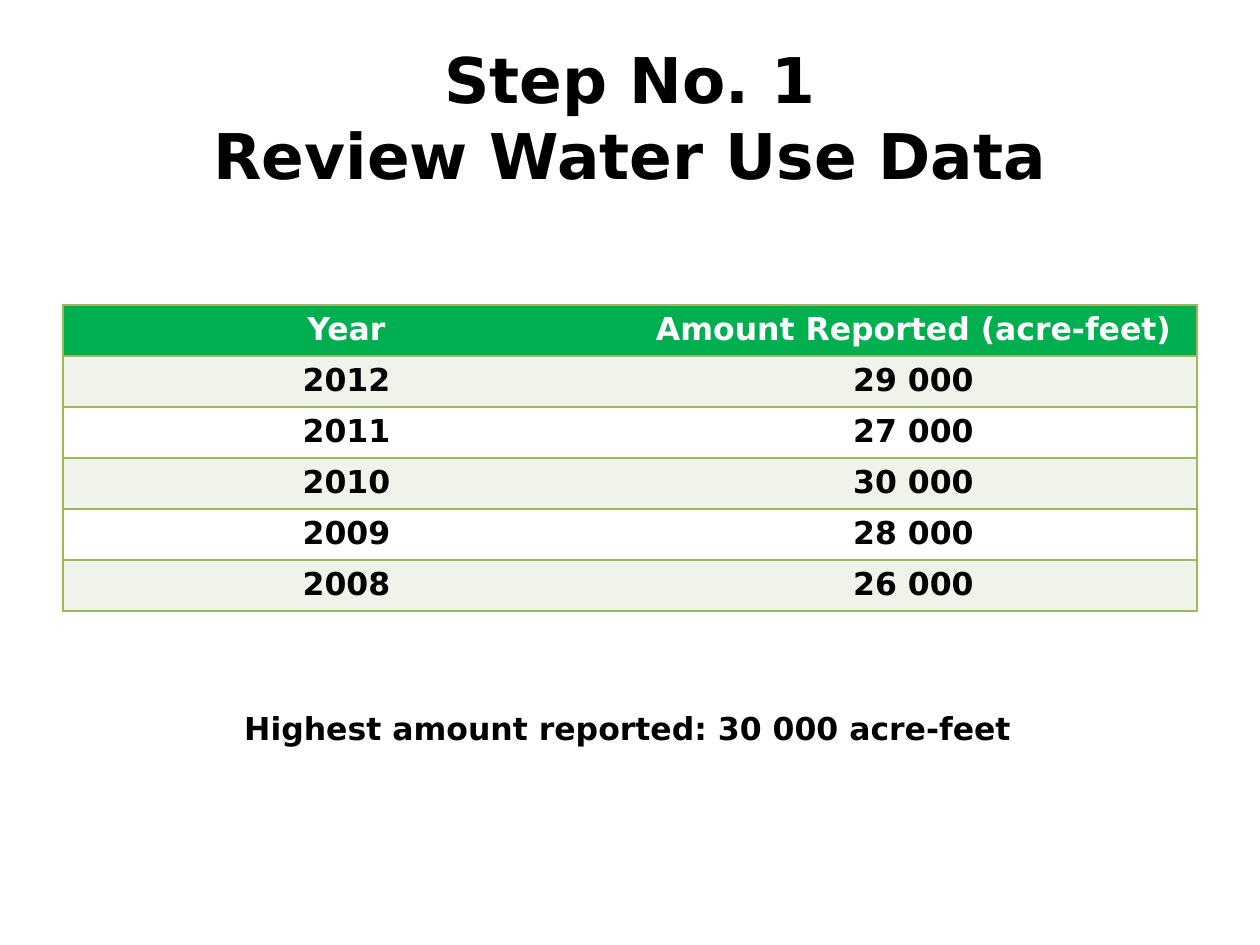
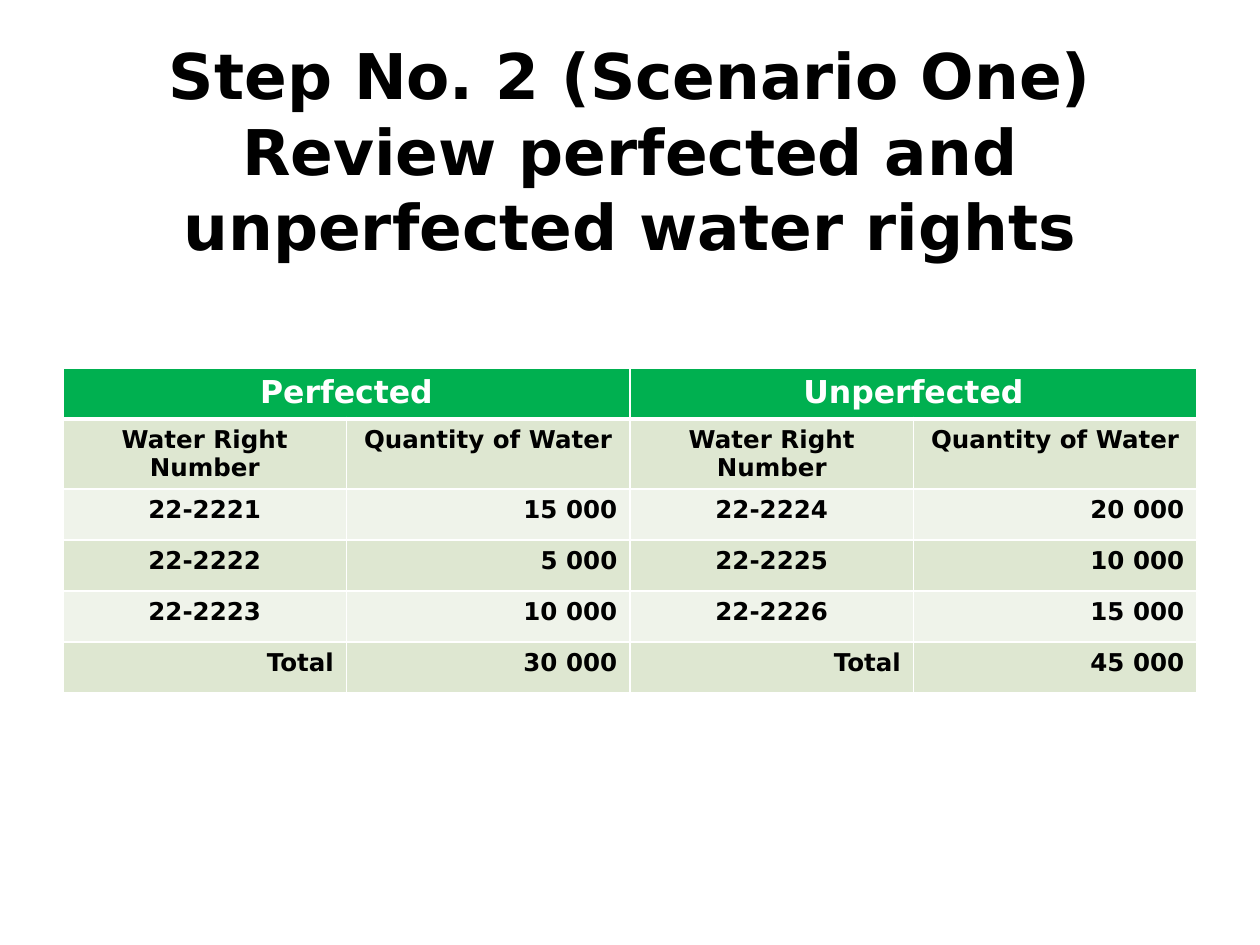
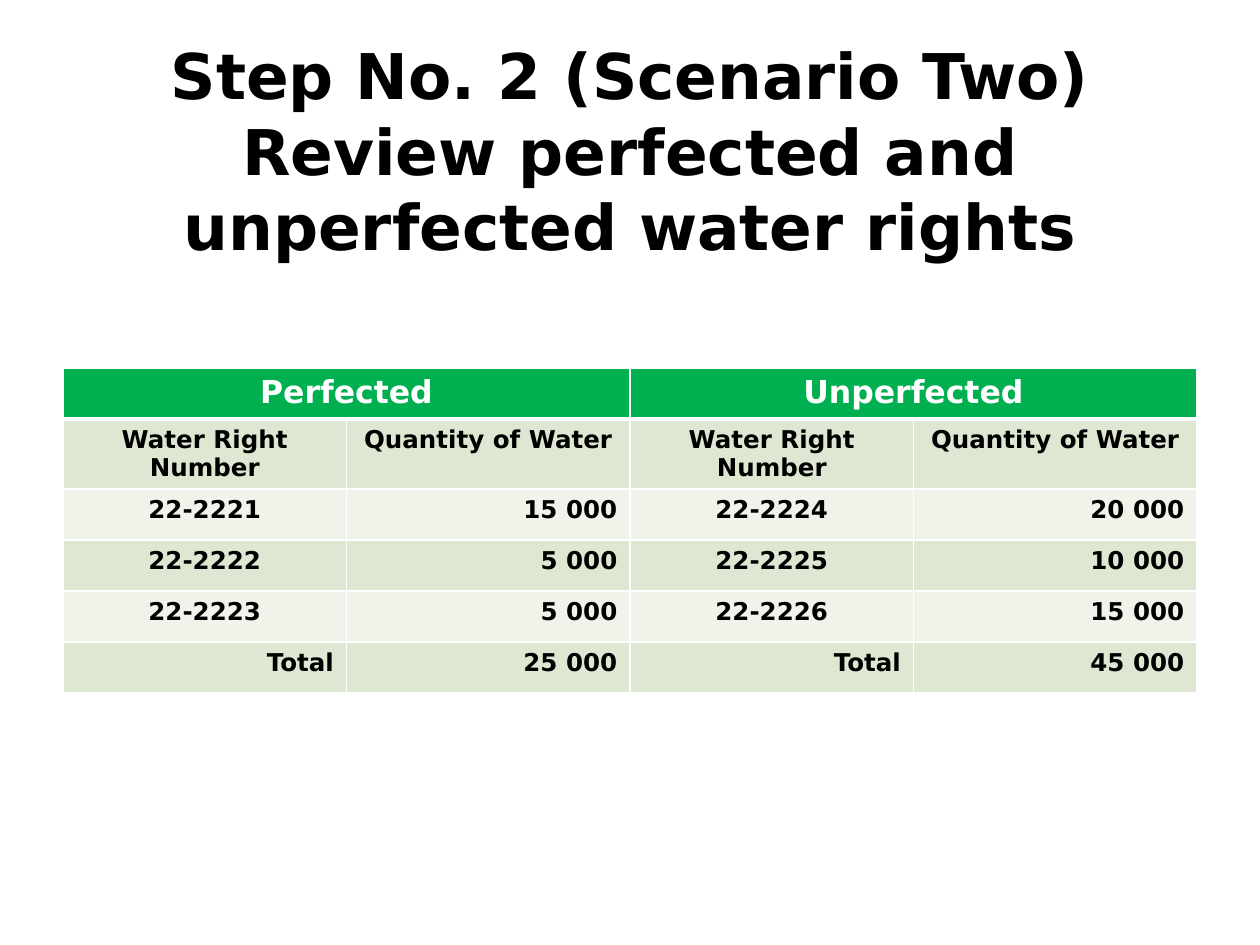
from dataclasses import dataclass
from typing import Optional

from lxml.etree import SubElement
from pptx import Presentation
from pptx.dml.color import RGBColor
from pptx.enum.text import MSO_ANCHOR, MSO_AUTO_SIZE, PP_ALIGN
from pptx.oxml.ns import qn
from pptx.util import Inches, Pt

# Shared look
FONT = "DejaVu Sans"
BLACK = RGBColor(0x00, 0x00, 0x00)
WHITE = RGBColor(0xFF, 0xFF, 0xFF)
GREEN = RGBColor(0x00, 0xB0, 0x50)
OLIVE = RGBColor(0x9B, 0xBB, 0x59)
BAND_DARK = RGBColor(0xDE, 0xE7, 0xD1)
BAND_LIGHT = RGBColor(0xEF, 0xF3, 0xEA)

# Shared grid
SLIDE_W, SLIDE_H = Inches(10), Inches(7.5)
MARGIN = int(SLIDE_W * 0.05)
CONTENT_W = SLIDE_W - 2 * MARGIN
TITLE_TOP = int(SLIDE_H * 0.04)
ROW_H = Inches(0.405)


@dataclass
class Cell:
    text: str
    fill: RGBColor
    align: PP_ALIGN = PP_ALIGN.CENTER
    size: int = 18
    color: RGBColor = BLACK
    span: int = 1


@dataclass
class Borders:
    color: RGBColor
    inner_vertical: bool
    header_rule: float = 1


@dataclass
class Scenario:
    name: str
    perfected: list[int]
    unperfected: list[int]


USE_BY_YEAR = {2012: 29000, 2011: 27000, 2010: 30000, 2009: 28000, 2008: 26000}
SCENARIOS = [
    Scenario("One", [15000, 5000, 10000], [20000, 10000, 15000]),
    Scenario("Two", [15000, 5000, 5000], [20000, 10000, 15000]),
]


def spaced(amount: int) -> str:
    return f"{amount:,}".replace(",", " ")


def style(p, size: float, color: RGBColor, align: Optional[PP_ALIGN] = None) -> None:
    p.alignment = align
    p.font.name, p.font.size, p.font.bold = FONT, Pt(size), True
    p.font.color.rgb = color


def add_titled_slide(prs, title: str, height: float):
    s = prs.slides.add_slide(prs.slide_layouts[5])
    sp = s.shapes.title
    sp.left, sp.top, sp.width, sp.height = MARGIN, TITLE_TOP, CONTENT_W, Inches(height)
    tf = sp.text_frame
    tf.text = title
    tf.auto_size = MSO_AUTO_SIZE.NONE
    tf.vertical_anchor = MSO_ANCHOR.MIDDLE
    style(tf.paragraphs[0], 36, BLACK, PP_ALIGN.CENTER)
    return s


def set_border(cell, side: str, color: RGBColor, width: float) -> None:
    """Draw one side of a cell; a width of 0 hides it."""
    ln = SubElement(cell._tc.get_or_add_tcPr(), qn(f"a:ln{side}"), w=str(Pt(width)))
    if width:
        fill = SubElement(ln, qn("a:solidFill"))
        SubElement(fill, qn("a:srgbClr"), val=str(color))
    else:
        SubElement(ln, qn("a:noFill"))


def add_grid(s, top: float, n_cols: int, rows: list[list[Cell]], borders: Borders) -> None:
    frame = s.shapes.add_table(len(rows), n_cols, MARGIN, Inches(top),
                               CONTENT_W, ROW_H * len(rows))
    table = frame.table
    table.horz_banding = False
    for row in table.rows:
        row.height = ROW_H

    # Borders come before fills inside the cell properties
    for i in range(len(rows)):
        for j in range(n_cols):
            left = 1 if j == 0 or borders.inner_vertical else 0
            right = 1 if j == n_cols - 1 or borders.inner_vertical else 0
            above = borders.header_rule if i == 1 else 1
            below = borders.header_rule if i == 0 else 1
            for side, width in zip("LRTB", (left, right, above, below)):
                set_border(table.cell(i, j), side, borders.color, width)

    for i, row in enumerate(rows):
        j = 0
        for item in row:
            cell = table.cell(i, j)
            if item.span > 1:
                cell.merge(table.cell(i, j + item.span - 1))
            cell.fill.solid()
            cell.fill.fore_color.rgb = item.fill
            cell.text = item.text
            style(cell.text_frame.paragraphs[0], item.size, item.color, item.align)
            j += item.span


def header(text: str, span: int = 1) -> Cell:
    return Cell(text, GREEN, color=WHITE, span=span)


def add_water_use(prs) -> None:
    s = add_titled_slide(prs, "Step No. 1\vReview Water Use Data", 1.25)
    rows = [[header("Year"), header("Amount Reported (acre-feet)")]]
    for i, (year, amount) in enumerate(USE_BY_YEAR.items()):
        fill = WHITE if i % 2 else BAND_LIGHT
        rows.append([Cell(str(year), fill), Cell(spaced(amount), fill)])
    add_grid(s, 2.42, 2, rows, Borders(OLIVE, inner_vertical=False))

    # Conclusion below the table
    sp = s.shapes.add_textbox(Inches(1.84), Inches(5.58), Inches(6.33), Inches(0.4))
    tf = sp.text_frame
    tf.word_wrap = False
    tf.auto_size = MSO_AUTO_SIZE.SHAPE_TO_FIT_TEXT
    tf.text = f"Highest amount reported: {spaced(max(USE_BY_YEAR.values()))} acre-feet"
    style(tf.paragraphs[0], 18, BLACK)


def add_scenario(prs, scenario: Scenario) -> None:
    s = add_titled_slide(prs, f"Step No. 2 (Scenario {scenario.name})\v"
                              "Review perfected and unperfected water rights", 1.78)
    groups = (scenario.perfected, scenario.unperfected)
    rows = [
        [header("Perfected", 2), header("Unperfected", 2)],
        [Cell(text, BAND_DARK, size=14)
         for text in ("Water Right Number", "Quantity of Water") * 2],
    ]
    # Water rights are numbered on from one group to the next
    for i, amounts in enumerate(zip(*groups)):
        fill = BAND_DARK if i % 2 else BAND_LIGHT
        row = []
        for g, amount in enumerate(amounts):
            number = 2221 + g * len(scenario.perfected) + i
            row += [Cell(f"22-{number}", fill, size=14),
                    Cell(spaced(amount), fill, PP_ALIGN.RIGHT, 14)]
        rows.append(row)
    rows.append([Cell(text, BAND_DARK, PP_ALIGN.RIGHT, 14)
                 for group in groups for text in ("Total", spaced(sum(group)))])
    add_grid(s, 2.92, 4, rows, Borders(WHITE, inner_vertical=True, header_rule=3))


def main() -> None:
    prs = Presentation()
    prs.slide_width, prs.slide_height = SLIDE_W, SLIDE_H
    add_water_use(prs)
    for scenario in SCENARIOS:
        add_scenario(prs, scenario)
    prs.save("out.pptx")


if __name__ == "__main__":
    main()
